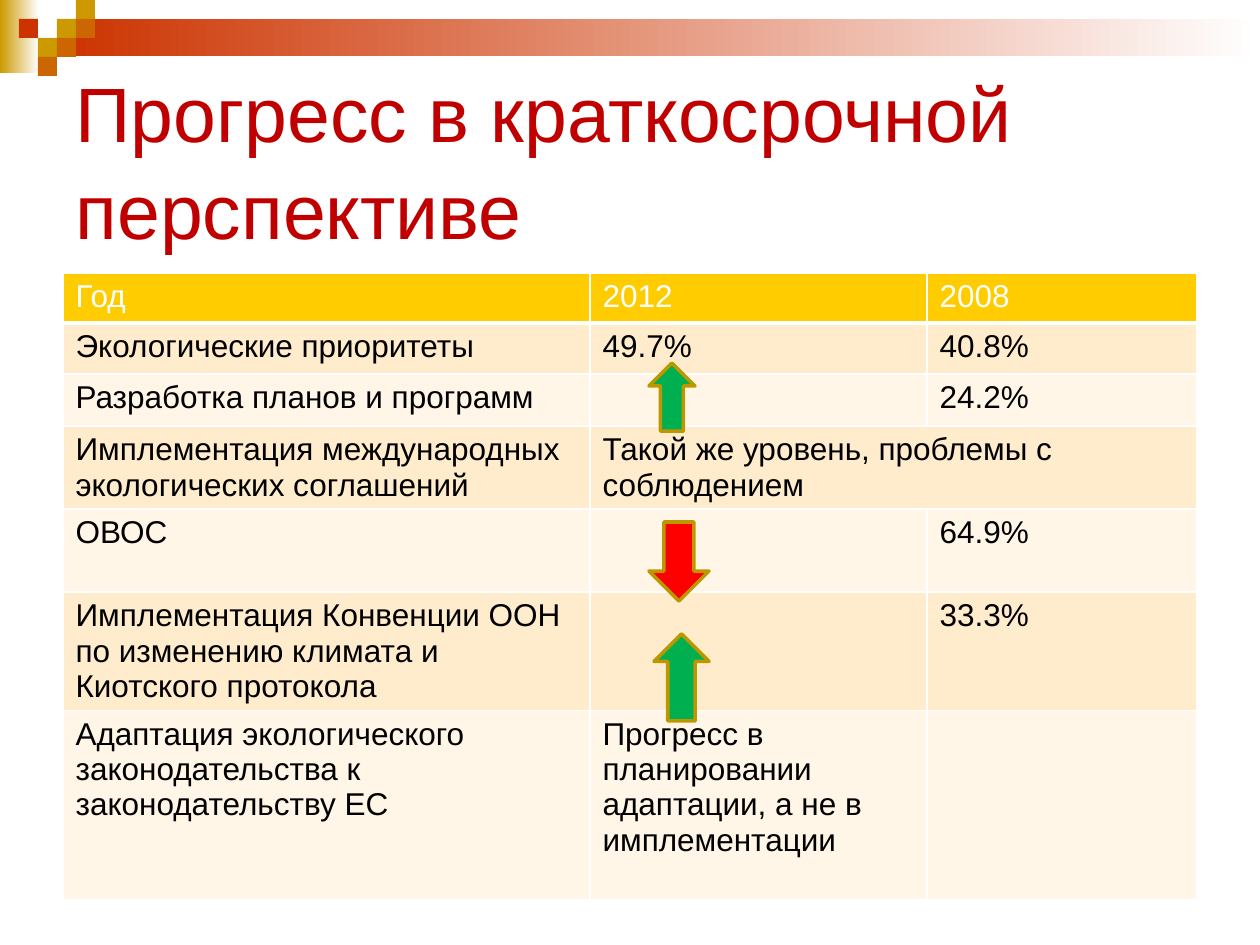
"""Build a slide with a table of short-term environmental progress and trend arrows."""
from lxml.etree import SubElement
from pptx import Presentation
from pptx.dml.color import RGBColor
from pptx.enum.shapes import MSO_SHAPE as Shape
from pptx.enum.text import MSO_ANCHOR as Anchor, MSO_AUTO_SIZE as AutoSize, PP_ALIGN as Align
from pptx.oxml.ns import qn
from pptx.util import Pt

WHITE = RGBColor(0xFF, 0xFF, 0xFF)
BLACK = RGBColor(0x00, 0x00, 0x00)
TITLE_RED = RGBColor(0xC0, 0x00, 0x00)
GOLD = RGBColor(0xCC, 0x99, 0x00)
RUST = RGBColor(0xCC, 0x33, 0x00)
ORANGE = RGBColor(0xCC, 0x66, 0x00)
HEADER = RGBColor(0xFF, 0xCC, 0x00)
BAND_DARK = RGBColor(0xFF, 0xEC, 0xCC)
BAND_LIGHT = RGBColor(0xFF, 0xF6, 0xE7)
GREEN = RGBColor(0x00, 0xB0, 0x50)
RED = RGBColor(0xFF, 0x00, 0x00)
ARROW_LINE = RGBColor(0xBD, 0x97, 0x00)

FONT = "Arial"
TITLE = "Прогресс в краткосрочной перспективе"
ROWS = [
    (50, "Год", "2012", "2008"),
    (51, "Экологические приоритеты", "49.7%", "40.8%"),
    (52, "Разработка планов и программ", "", "24.2%"),
    (83, "Имплементация международных экологических соглашений",
     "Такой же уровень, проблемы с соблюдением", ""),
    (83, "ОВОС", "", "64.9%"),
    (118, "Имплементация Конвенции ООН по изменению климата и Киотского протокола", "", "33.3%"),
    (189, "Адаптация экологического законодательства к законодательству ЕС",
     "Прогресс в планировании адаптации, а не в имплементации", ""),
]
COLUMN_WIDTHS = [527, 337, 270]
MERGED_ROW = 3
ARROWS = [
    (Shape.UP_ARROW, GREEN, (649, 363, 46, 68)),
    (Shape.DOWN_ARROW, RED, (649, 522, 60, 79)),
    (Shape.UP_ARROW, GREEN, (654, 634, 55, 87)),
]
GRADIENTS = [(GOLD, (0, 0, 39, 73)), (RUST, (57, 19, 1203, 37))]
TILE = 19
TILES = [(3, 1, GOLD), (4, 0, GOLD), (4, 1, ORANGE), (2, 2, GOLD),
         (1, 1, RUST), (3, 2, ORANGE), (2, 3, ORANGE)]


def px(length):
    return round(length * 914400 / 126)


def add_shape(slide, kind, box):
    shape = slide.shapes.add_shape(kind, *map(px, box))
    shape.shadow.inherit = False
    shape.line.fill.background()
    return shape


def fill_solid(target, color):
    target.fill.solid()
    target.fill.fore_color.rgb = color


def write(text_frame, text, size, color):
    paragraph = text_frame.paragraphs[0]
    paragraph.font.size = Pt(size)
    if text:
        run = paragraph.add_run()
        run.text = text
        run.font.name = FONT
        run.font.size = Pt(size)
        run.font.bold = False
        run.font.color.rgb = color
    return paragraph


def add_borders(cell, bottom_width):
    properties = cell._tc.get_or_add_tcPr()
    for side, width in (("L", 1), ("R", 1), ("T", 1), ("B", bottom_width)):
        line = SubElement(properties, qn(f"a:ln{side}"), w=str(Pt(width)))
        fill = SubElement(line, qn("a:solidFill"))
        SubElement(fill, qn("a:srgbClr"), val=str(WHITE))


def add_decoration(slide):
    for color, box in GRADIENTS:
        fill = add_shape(slide, Shape.RECTANGLE, box).fill
        fill.gradient()
        fill.gradient_angle = 0
        for stop, stop_color in zip(fill.gradient_stops, (color, WHITE)):
            stop.color.rgb = stop_color
    for column, row, color in TILES:
        box = (column * TILE, row * TILE, TILE, TILE)
        fill_solid(add_shape(slide, Shape.RECTANGLE, box), color)


def add_title(slide):
    title = slide.shapes.title
    title.left, title.top, title.width, title.height = map(px, (63, 63, 1134, 189))
    frame = title.text_frame
    frame.auto_size = AutoSize.NONE
    frame.vertical_anchor = Anchor.MIDDLE
    paragraph = write(frame, TITLE, 44, TITLE_RED)
    paragraph.alignment = Align.LEFT
    paragraph.line_spacing = 1.05


def add_progress_table(slide):
    heights = [row[0] for row in ROWS]
    box = (63, 273, sum(COLUMN_WIDTHS), sum(heights))
    table = slide.shapes.add_table(len(ROWS), len(COLUMN_WIDTHS), *map(px, box)).table
    for column, width in zip(table.columns, COLUMN_WIDTHS):
        column.width = px(width)
    for index, (height, *texts) in enumerate(ROWS):
        table.rows[index].height = px(height)
        is_header = index == 0
        band = HEADER if is_header else BAND_DARK if index % 2 else BAND_LIGHT
        for column, text in enumerate(texts):
            cell = table.cell(index, column)
            add_borders(cell, 3 if is_header else 1)
            fill_solid(cell, band)
            write(cell.text_frame, text, 18, WHITE if is_header else BLACK)
    table.cell(MERGED_ROW, 1).merge(table.cell(MERGED_ROW, 2))


def add_arrows(slide):
    for kind, color, box in ARROWS:
        arrow = add_shape(slide, kind, box)
        fill_solid(arrow, color)
        arrow.line.color.rgb = ARROW_LINE
        arrow.line.width = Pt(2)


def main():
    presentation = Presentation()
    presentation.slide_width, presentation.slide_height = px(1260), px(945)
    slide = presentation.slides.add_slide(presentation.slide_layouts[5])
    add_decoration(slide)
    add_title(slide)
    add_progress_table(slide)
    add_arrows(slide)
    presentation.save("out.pptx")


if __name__ == "__main__":
    main()
